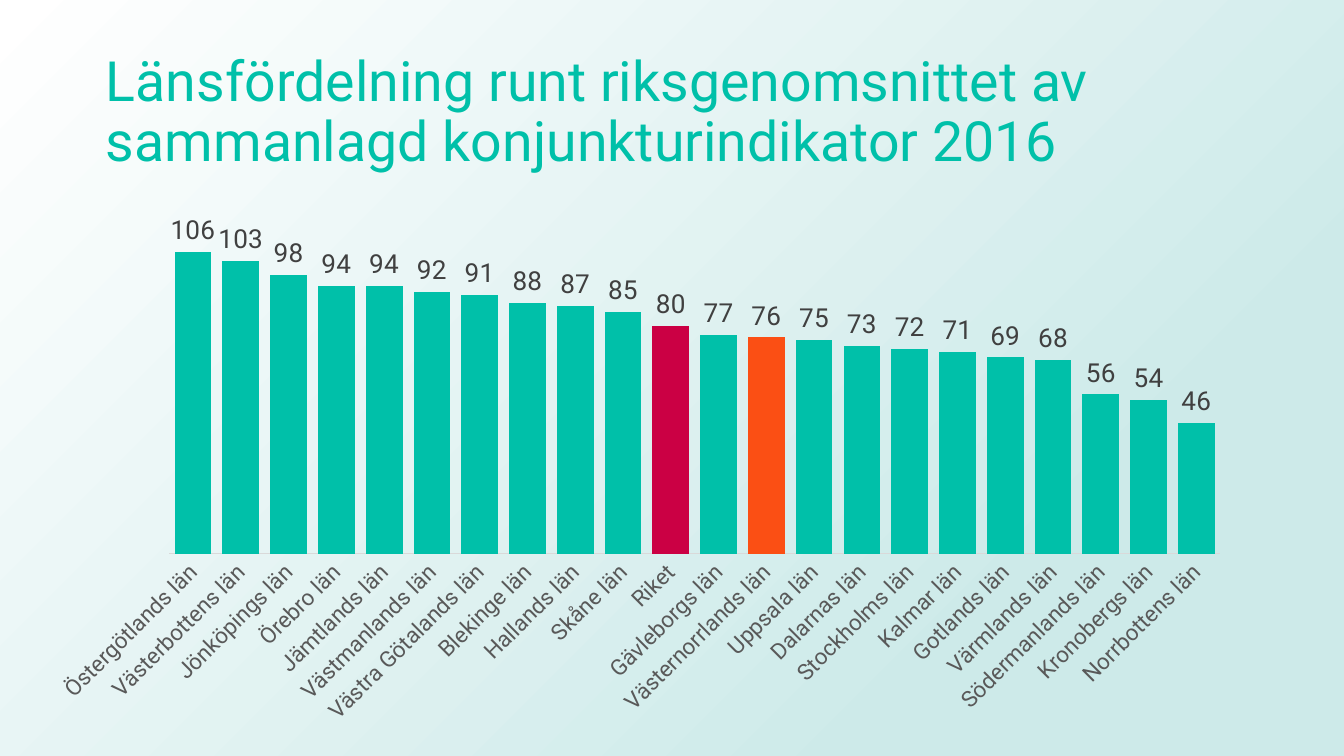
from typing import NamedTuple

from lxml.etree import SubElement
from pptx import Presentation
from pptx.chart.chart import Chart
from pptx.chart.data import CategoryChartData
from pptx.dml.color import RGBColor
from pptx.dml.fill import FillFormat
from pptx.enum.chart import XL_CHART_TYPE, XL_LABEL_POSITION, XL_TICK_MARK
from pptx.enum.shapes import MSO_SHAPE
from pptx.enum.text import MSO_ANCHOR
from pptx.oxml import parse_xml
from pptx.oxml.ns import nsdecls, qn
from pptx.slide import Slide
from pptx.text.text import Font
from pptx.util import Inches, Pt

FONT = "Roboto"
TEAL, RED, ORANGE = "00C0A9", "CB0044", "FB4F14"


class County(NamedTuple):
    name: str
    value: int
    color: str = TEAL


COUNTIES = [
    County("Östergötlands län", 106),
    County("Västerbottens län", 103),
    County("Jönköpings län", 98),
    County("Örebro län", 94),
    County("Jämtlands län", 94),
    County("Västmanlands län", 92),
    County("Västra Götalands län", 91),
    County("Blekinge län", 88),
    County("Hallands län", 87),
    County("Skåne län", 85),
    County("Riket", 80, RED),
    County("Gävleborgs län", 77),
    County("Västernorrlands län", 76, ORANGE),
    County("Uppsala län", 75),
    County("Dalarnas län", 73),
    County("Stockholms län", 72),
    County("Kalmar län", 71),
    County("Gotlands län", 69),
    County("Värmlands län", 68),
    County("Södermanlands län", 56),
    County("Kronobergs län", 54),
    County("Norrbottens län", 46),
]


def rgb(color: str) -> RGBColor:
    return RGBColor.from_string(color)


def set_fill(fill: FillFormat, color: str) -> None:
    fill.solid()
    fill.fore_color.rgb = rgb(color)


def set_font(font: Font, size: float, color: str) -> None:
    font.name = FONT
    font.size = Pt(size)
    font.color.rgb = rgb(color)


def add_background(s: Slide, width: int, height: int) -> None:
    sp = s.shapes.add_shape(MSO_SHAPE.RECTANGLE, 0, 0, width, height)
    sp.shadow.inherit = False
    sp.line.fill.background()
    gradient = parse_xml(
        f'<a:gradFill {nsdecls("a")} rotWithShape="1"><a:gsLst>'
        '<a:gs pos="23000"><a:srgbClr val="CDEAE9"/></a:gs>'
        '<a:gs pos="100000"><a:srgbClr val="FFFFFF"/></a:gs></a:gsLst>'
        '<a:path path="circle"><a:fillToRect l="100000" t="100000"/></a:path>'
        "</a:gradFill>"
    )
    sp.element.spPr.find(qn("a:prstGeom")).addnext(gradient)


def add_title(s: Slide, text: str) -> None:
    sp = s.shapes.add_textbox(Inches(0.69), Inches(0.3), Inches(8.62), Inches(1.09))
    tf = sp.text_frame
    tf.word_wrap = True
    tf.vertical_anchor = MSO_ANCHOR.MIDDLE
    p = tf.paragraphs[0]
    p.line_spacing = 0.9
    r = p.add_run()
    r.text = text
    set_font(r.font, 29.7, TEAL)


def set_plot_layout(chart: Chart, x: float, y: float, w: float, h: float) -> None:
    plot_area = chart.element.find(".//" + qn("c:plotArea"))
    layout = plot_area.find(qn("c:layout"))
    if layout is None:
        layout = SubElement(plot_area, qn("c:layout"))
        plot_area.insert(0, layout)
    manual = SubElement(layout, qn("c:manualLayout"))
    settings = {"layoutTarget": "inner", "xMode": "edge", "yMode": "edge",
                "x": x, "y": y, "w": w, "h": h}
    for tag, value in settings.items():
        SubElement(manual, qn(f"c:{tag}")).set("val", str(value))


def add_county_chart(s: Slide, counties: list[County]) -> None:
    data = CategoryChartData(number_format="0")
    data.categories = [county.name for county in counties]
    data.add_series("Series 1", [county.value for county in counties])
    chart = s.shapes.add_chart(
        XL_CHART_TYPE.COLUMN_CLUSTERED,
        Inches(0.26), Inches(1.5), Inches(8.99), Inches(3.97), data,
    ).chart
    chart.has_title = False
    chart.has_legend = False
    chart.font.name = "Calibri"
    chart.font.size = Pt(10)
    chart.font.color.rgb = rgb("000000")
    set_plot_layout(chart, 1 / 9, 0.02, 0.87, 0.64)

    value_axis = chart.value_axis
    value_axis.minimum_scale = 0
    value_axis.maximum_scale = 120
    value_axis.has_major_gridlines = False
    value_axis.visible = False

    category_axis = chart.category_axis
    category_axis.major_tick_mark = XL_TICK_MARK.NONE
    category_axis.format.line.color.rgb = rgb("D9D9D9")
    category_axis.format.line.width = Pt(0.75)
    set_font(category_axis.tick_labels.font, 12, "595959")
    body = category_axis._element.find(qn("c:txPr")).find(qn("a:bodyPr"))
    body.set("rot", "-2700000")
    body.set("vert", "horz")

    plot = chart.plots[0]
    plot.gap_width = 30
    plot.vary_by_categories = False
    plot.has_data_labels = True
    labels = plot.data_labels
    labels.show_value = True
    labels.number_format = "0"
    labels.number_format_is_linked = False
    labels.position = XL_LABEL_POSITION.OUTSIDE_END
    set_font(labels.font, 14, "404040")

    series = plot.series[0]
    set_fill(series.format.fill, TEAL)
    for i, county in enumerate(counties):
        if county.color != TEAL:
            set_fill(series.points[i].format.fill, county.color)


def main() -> None:
    prs = Presentation()
    prs.slide_width = Inches(10)
    prs.slide_height = Inches(10) * 9 // 16
    s = prs.slides.add_slide(prs.slide_layouts[6])
    add_background(s, prs.slide_width, prs.slide_height)
    add_title(s, "Länsfördelning runt riksgenomsnittet av sammanlagd konjunkturindikator 2016")
    add_county_chart(s, COUNTIES)
    prs.save("out.pptx")


if __name__ == "__main__":
    main()
